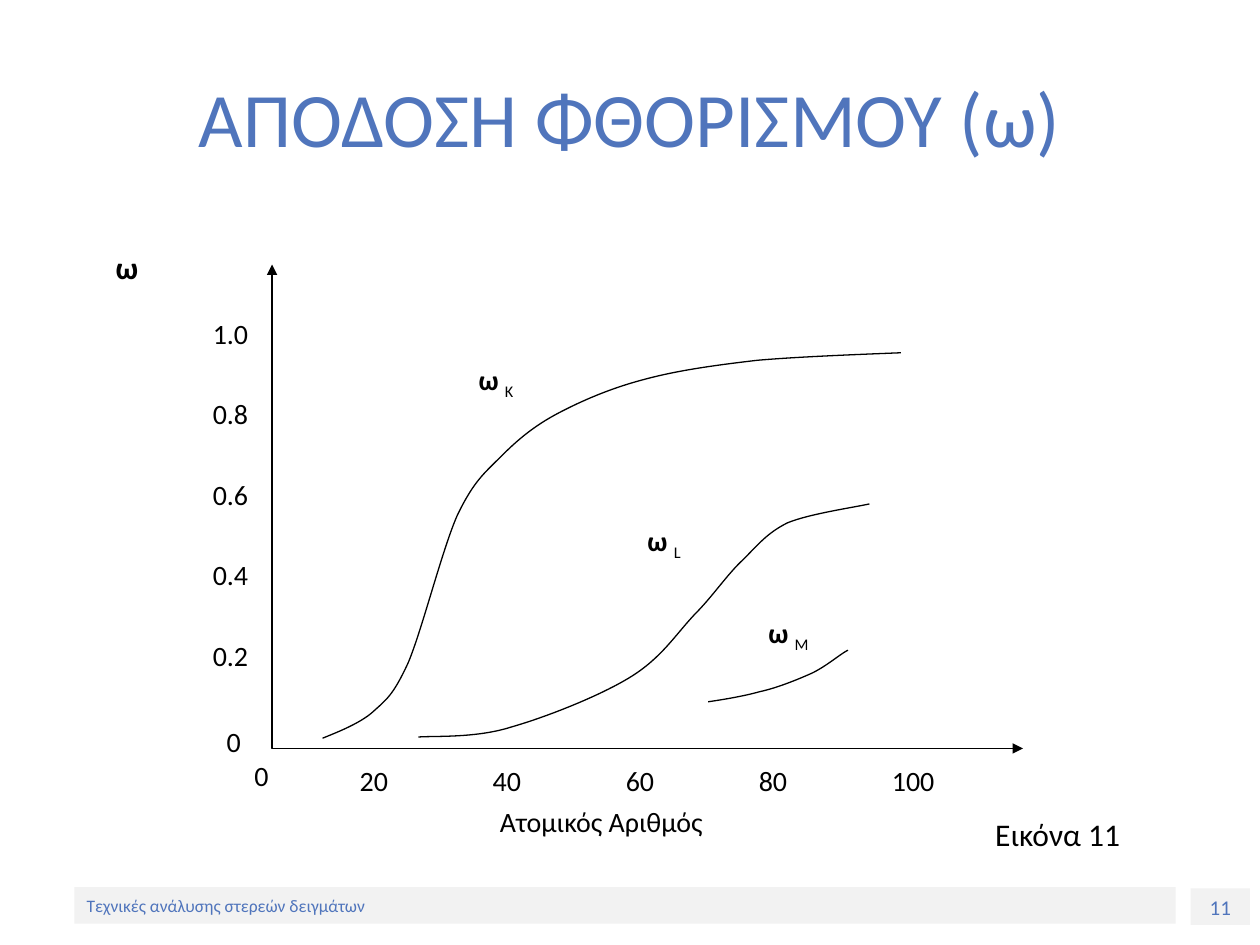
"""Build the slide on fluorescence yield against atomic number."""
from typing import NamedTuple

from lxml import etree
from pptx import Presentation
from pptx import util as u
from pptx.dml.color import RGBColor
from pptx.enum import shapes, text
from pptx.oxml.ns import qn

BLACK = RGBColor(0x00, 0x00, 0x00)
WHITE = RGBColor(0xFF, 0xFF, 0xFF)
BLUE = RGBColor(0x50, 0x75, 0xBC)
PALE = RGBColor(0xF2, 0xF2, 0xF2)
FONT = "Calibri"
Point = tuple[float, float]


class Label(NamedTuple):
    words: str
    left: float
    top: float
    width: float = 0.58
    height: float = 0.37
    size: int = 16
    bold: bool = False
    subscript: str = ""


class Panel(NamedTuple):
    words: str
    left: float
    top: float
    width: float
    height: float
    size: int
    fill: RGBColor
    color: RGBColor
    align: text.PP_ALIGN = text.PP_ALIGN.LEFT
    anchor: text.MSO_ANCHOR = text.MSO_ANCHOR.MIDDLE


FOOTER_PANELS = [
    Panel("11", 9.45, 7.05, 0.47, 0.29, 12, PALE, BLUE,
          text.PP_ALIGN.CENTER, text.MSO_ANCHOR.TOP),
    Panel("Τεχνικές ανάλυσης στερεών δειγμάτων", 0.59, 7.04, 8.74, 0.29, 10, PALE, BLUE),
]
FIGURE_PANEL = Panel("Εικόνα 11", 7.8, 6.38, 1.26, 0.47, 18, WHITE, BLACK)
YIELD_LABEL = Label("ω", 0.82, 1.92, 7.87, 4.93, 18, True)
TICK_LABELS = [
    Label("0", 1.7, 5.7),
    *(Label(f"{0.2 * i:.1f}", 1.59, 5.66 - 0.64 * i) for i in range(1, 6)),
    Label("0", 1.92, 5.97),
    *(Label(str(20 * i), 1.7 + 1.056 * i, 6.01) for i in range(1, 6)),
]
NAME_LABELS = [
    Label("ω ", 3.7, 2.83, 0.77, bold=True, subscript="Κ"),
    Label("ω ", 5.04, 4.11, 0.77, bold=True, subscript="L"),
    Label("ω ", 6, 4.84, 0.77, bold=True, subscript="M"),
    Label("Ατομικός Αριθμός", 3.87, 6.34, 2.3),
]
AXES = [(2.16, 2.1), (2.16, 5.94), (8.12, 5.94)]
M_CURVE = [
    (5.62, 5.57), (5.69, 5.56), (5.89, 5.53), (6.03, 5.49), (6.17, 5.46),
    (6.34, 5.39), (6.45, 5.34), (6.57, 5.28), (6.67, 5.19), (6.73, 5.16),
]
L_CURVE = [
    (3.32, 5.85), (3.45, 5.84), (3.78, 5.86), (4.06, 5.77), (4.34, 5.69),
    (4.77, 5.52), (5.01, 5.37), (5.25, 5.22), (5.36, 5.04), (5.51, 4.88),
    (5.66, 4.73), (5.77, 4.56), (5.9, 4.44), (6.02, 4.32), (6.09, 4.23),
    (6.25, 4.15), (6.42, 4.08), (6.76, 4.03), (6.9, 4),
]
K_CURVE = [
    (2.56, 5.86), (2.63, 5.83), (2.85, 5.75), (2.96, 5.65), (3.07, 5.55),
    (3.12, 5.52), (3.24, 5.26), (3.35, 5), (3.51, 4.36), (3.63, 4.09),
    (3.76, 3.82), (3.84, 3.76), (3.98, 3.62), (4.11, 3.49), (4.24, 3.38),
    (4.43, 3.28), (4.62, 3.18), (4.85, 3.08), (5.12, 3.01), (5.38, 2.94),
    (5.67, 2.9), (6.01, 2.86), (6.35, 2.83), (6.91, 2.81), (7.15, 2.8),
]


def add_run(paragraph, words: str, size: int, color: RGBColor, bold: bool = False):
    run = paragraph.add_run()
    run.text = words
    for attribute, value in {"name": FONT, "size": u.Pt(size), "bold": bold}.items():
        setattr(run.font, attribute, value)
    run.font.color.rgb = color
    return run


def box_of(part: Label | Panel) -> list[u.Length]:
    return [u.Inches(n) for n in (part.left, part.top, part.width, part.height)]


def draw_label(slide, label: Label) -> None:
    frame = slide.shapes.add_textbox(*box_of(label)).text_frame
    frame.word_wrap = True
    paragraph = frame.paragraphs[0]
    add_run(paragraph, label.words, label.size, BLACK, label.bold)
    if label.subscript:
        shell = add_run(paragraph, label.subscript, label.size, BLACK)
        shell.font._element.set("baseline", "-25000")


def draw_panel(slide, panel: Panel) -> None:
    plate = slide.shapes.add_shape(shapes.MSO_SHAPE.RECTANGLE, *box_of(panel))
    plate.shadow.inherit = False
    plate.fill.solid()
    plate.fill.fore_color.rgb = panel.fill
    plate.line.fill.background()
    frame = plate.text_frame
    frame.word_wrap = True
    frame.vertical_anchor = panel.anchor
    paragraph = frame.paragraphs[0]
    paragraph.alignment = panel.align
    add_run(paragraph, panel.words, panel.size, panel.color)


def draw_outline(slide, points: list[Point]):
    start, *rest = [(u.Inches(x), u.Inches(y)) for x, y in points]
    builder = slide.shapes.build_freeform(*start)
    builder.add_line_segments(rest, close=False)
    outline = builder.convert_to_shape()
    outline.shadow.inherit = False
    outline.fill.background()
    outline.line.color.rgb = BLACK
    outline.line.width = u.Pt(0.75)
    return outline


def draw_axes(slide, points: list[Point]) -> None:
    line = draw_outline(slide, points).line._get_or_add_ln()
    for end in ("a:headEnd", "a:tailEnd"):
        etree.SubElement(line, qn(end), type="triangle")


def draw_curve(slide, controls: list[Point]) -> None:
    track = next(draw_outline(slide, controls)._element.iter(qn("a:path")))
    segments = track.findall(qn("a:lnTo"))
    for first in range(0, len(segments), 3):
        bend = etree.SubElement(track, qn("a:cubicBezTo"))
        for segment in segments[first:first + 3]:
            bend.append(segment[0])
            track.remove(segment)


def draw_title(slide, words: str) -> None:
    title = slide.shapes.title
    place = {"left": 0.5, "top": 0.3, "width": 9, "height": 1.25}
    for attribute, value in place.items():
        setattr(title, attribute, u.Inches(value))
    title.text_frame.vertical_anchor = text.MSO_ANCHOR.MIDDLE
    paragraph = title.text_frame.paragraphs[0]
    paragraph.alignment = text.PP_ALIGN.CENTER
    add_run(paragraph, words, 44, BLUE)


def main() -> None:
    deck = Presentation()
    deck.slide_width, deck.slide_height = u.Inches(10), u.Inches(7.5)
    slide = deck.slides.add_slide(deck.slide_layouts[5])
    draw_title(slide, "ΑΠΟΔΟΣΗ ΦΘΟΡΙΣΜΟΥ (ω)")
    for panel in FOOTER_PANELS:
        draw_panel(slide, panel)
    draw_label(slide, YIELD_LABEL)
    draw_axes(slide, AXES)
    for label in TICK_LABELS:
        draw_label(slide, label)
    for curve in (M_CURVE, L_CURVE, K_CURVE):
        draw_curve(slide, curve)
    for label in NAME_LABELS:
        draw_label(slide, label)
    draw_panel(slide, FIGURE_PANEL)
    deck.save("out.pptx")


if __name__ == "__main__":
    main()
